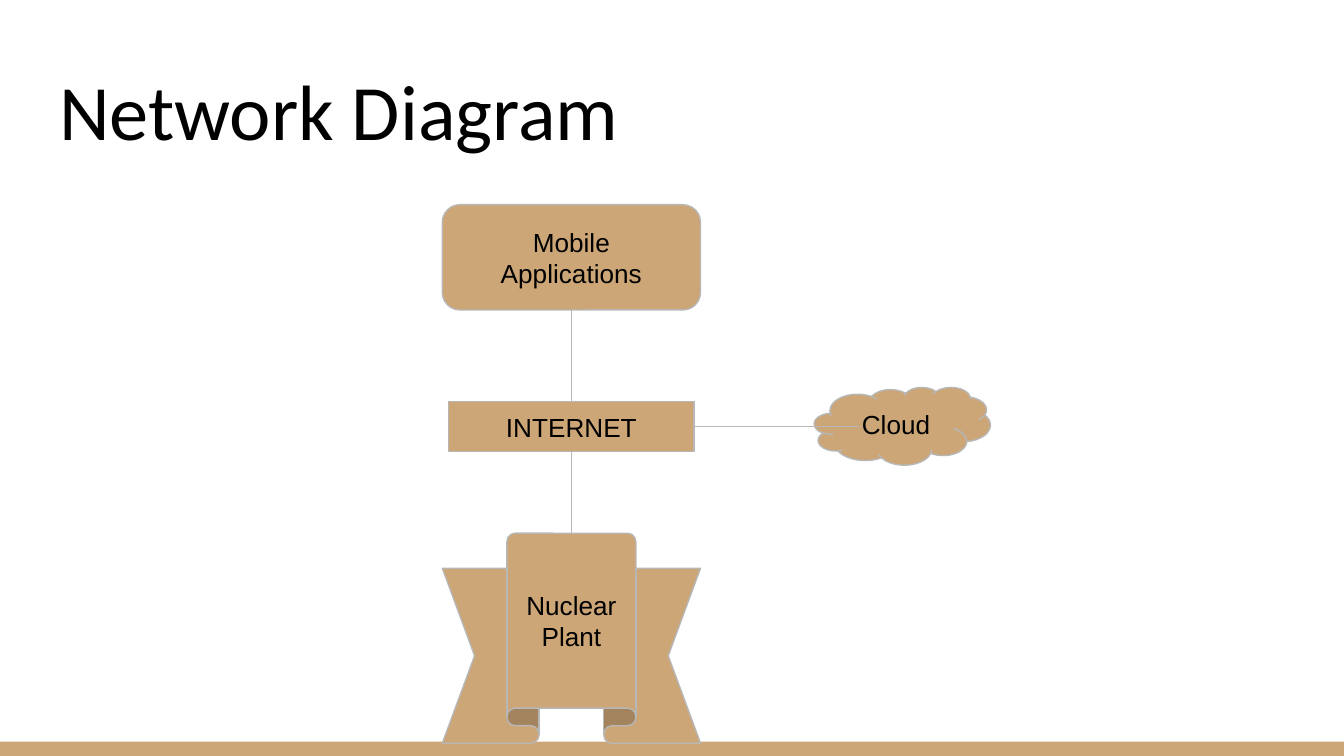
from lxml import etree
from pptx import Presentation
from pptx.dml.color import RGBColor as RGB
from pptx.enum.shapes import MSO_CONNECTOR as Link, MSO_SHAPE as Kind
from pptx.enum.text import MSO_ANCHOR as Anchor, MSO_AUTO_SIZE as Auto, PP_ALIGN as Align
from pptx.oxml.ns import qn
from pptx.util import Cm, Pt

HUES = {"tan": "CCA677", "grey": "B7B7B7", "ink": "000000"}


def hue(name):
    return RGB.from_string(HUES[name])


def write(shape, text, font, size, align, anchor):
    frame = shape.text_frame
    frame.word_wrap = True
    frame.auto_size = Auto.NONE
    frame.vertical_anchor = anchor
    frame.margin_left = frame.margin_right = Cm(0.25)
    frame.margin_top = frame.margin_bottom = Cm(0.25)
    para = frame.paragraphs[0]
    para.alignment = align
    run = para.add_run()
    run.text = text
    run.font.name = font
    run.font.size = Pt(size)
    run.font.color.rgb = hue("ink")


deck = Presentation()
deck.slide_width, deck.slide_height = Cm(25.4), Cm(14.29)
slide = deck.slides.add_slide(deck.slide_layouts[5])
shapes = slide.shapes

# Band along the foot
band = shapes.add_shape(Kind.RECTANGLE, Cm(0), Cm(14.02), Cm(25.4), Cm(0.27))
band.shadow.inherit = False
band.fill.solid()
band.fill.fore_color.rgb = hue("tan")
band.line.fill.background()

# Title
title = shapes.title
title.left, title.top, title.width, title.height = Cm(0.87), Cm(0.89), Cm(23.67), Cm(2.31)
write(title, "Network Diagram", "Calibri", 42, Align.LEFT, Anchor.BOTTOM)

# Nodes: kind, label, left, top, width, height, adjustments
nodes = [
    (Kind.ROUNDED_RECTANGLE, "Mobile Applications", 8.36, 3.87, 4.88, 1.99, [0.167]),
    (Kind.CLOUD, "Cloud", 15.39, 7.32, 3.33, 1.47, []),
    (Kind.RECTANGLE, "INTERNET", 8.48, 7.59, 4.64, 0.95, []),
    (Kind.UP_RIBBON, "Nuclear Plant", 8.36, 10.08, 4.88, 3.97, [0.167, 0.5]),
]
for kind, label, left, top, width, height, bends in nodes:
    node = shapes.add_shape(kind, Cm(left), Cm(top), Cm(width), Cm(height))
    node.shadow.inherit = False
    for i, bend in enumerate(bends):
        node.adjustments[i] = bend
    node.fill.solid()
    node.fill.fore_color.rgb = hue("tan")
    node.line.color.rgb = hue("grey")
    node.line.width = Pt(0.75)
    write(node, label, "Arial", 14, Align.CENTER, Anchor.MIDDLE)

# Links between the nodes: start x, y, end x, y
links = [
    (10.8, 5.86, 10.8, 7.59),
    (10.8, 8.54, 10.8, 10.08),
    (13.12, 8.06, 16.23, 8.06),
]
for ends in links:
    link = shapes.add_connector(Link.STRAIGHT, *[Cm(end) for end in ends])
    link.line.color.rgb = hue("grey")
    link.line.width = Pt(0.75)
    etree.SubElement(link._element.spPr, qn("a:effectLst"))

deck.save("out.pptx")
